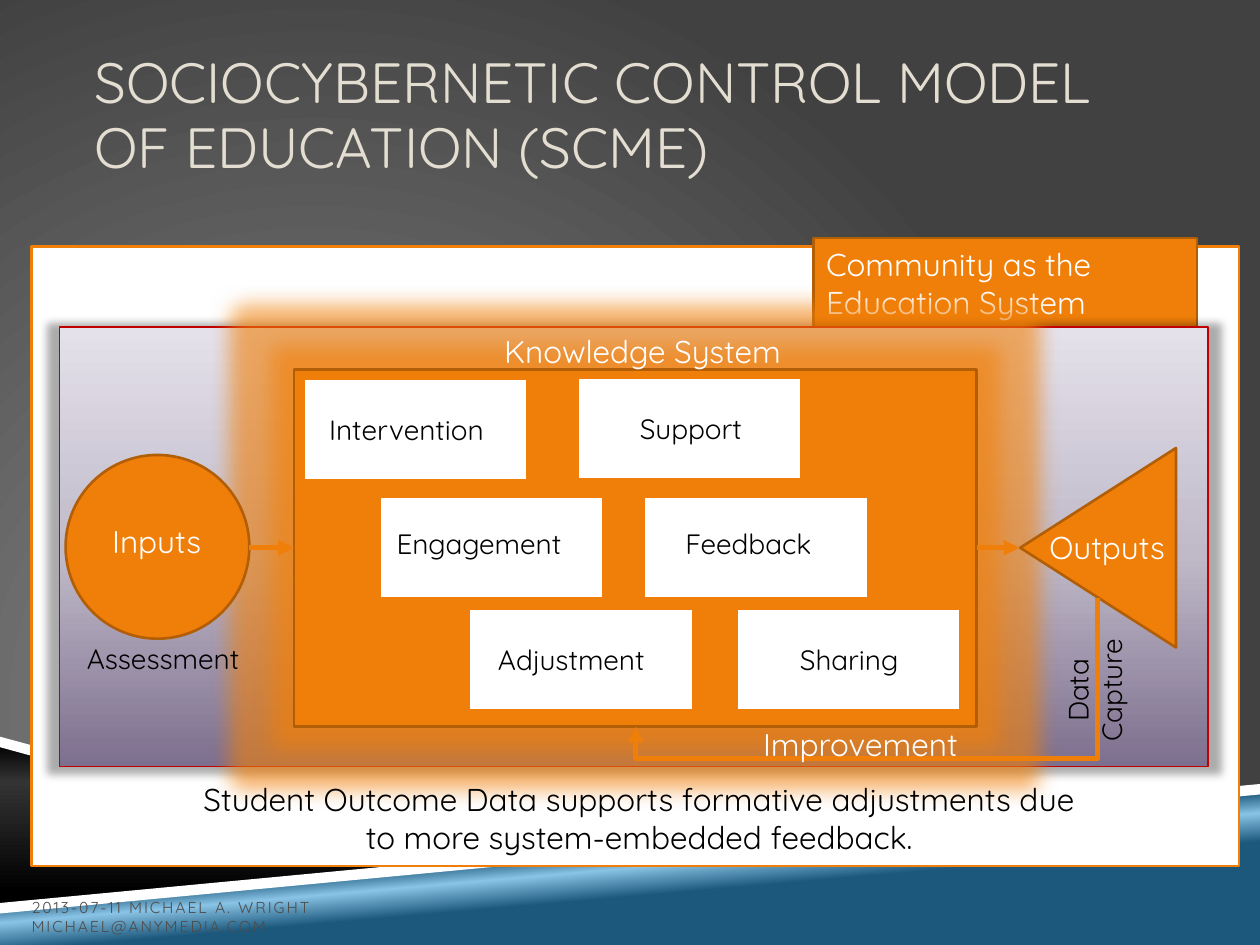
from lxml import etree
from pptx import Presentation
from pptx.dml.color import RGBColor
from pptx.enum import shapes, text
from pptx.oxml.ns import qn
from pptx.util import Pt

FONT = "Quicksand"
ORANGE = RGBColor(0xF0, 0x7F, 0x09)
BROWN = RGBColor(0xB2, 0x5E, 0x07)
RED = RGBColor(0xC0, 0x00, 0x00)
WHITE = RGBColor(0xFF, 0xFF, 0xFF)
BLACK = RGBColor(0x00, 0x00, 0x00)
GRAY = RGBColor(0x4D, 0x4D, 0x4D)
CHARCOAL = RGBColor(0x41, 0x41, 0x41)
SILVER = RGBColor(0x89, 0x89, 0x89)
CREAM = RGBColor(0xE3, 0xDE, 0xD1)
BLUE = RGBColor(0x1B, 0x58, 0x7C)
SKY = RGBColor(0x89, 0xC3, 0xE5)
SOOT = RGBColor(0x33, 0x33, 0x33)
PLUM = RGBColor(0x7D, 0x6F, 0x8E)
LILAC = RGBColor(0xBF, 0xB9, 0xC8)
MIST = RGBColor(0xE5, 0xE1, 0xEB)


def gradient(fill, owner, stops, angle=None):
    """Give the fill these colour stops, linear at an angle or circular without one."""
    fill.gradient()
    grad = owner.find(".//" + qn("a:gradFill"))
    grad.clear()
    gs_list = etree.SubElement(grad, qn("a:gsLst"))
    for pos, color in stops:
        gs = etree.SubElement(gs_list, qn("a:gs"), pos=str(pos * 1000))
        etree.SubElement(gs, qn("a:srgbClr"), val=str(color))
    if angle is None:
        circle = etree.SubElement(grad, qn("a:path"), path="circle")
        etree.SubElement(circle, qn("a:fillToRect"), l="50000", t="100000", r="100000", b="50000")
    else:
        etree.SubElement(grad, qn("a:lin"), ang=str(angle * 60000), scaled="0")


def write(sp, wording, size, color, align=text.PP_ALIGN.LEFT):
    tf = sp.text_frame
    tf.word_wrap = True
    tf.text = wording
    for p in tf.paragraphs:
        p.alignment = align
        for r in p.runs:
            r.font.name = FONT
            r.font.size = Pt(size)
            r.font.color.rgb = color
    return tf


prs = Presentation()
prs.slide_width, prs.slide_height = Pt(720), Pt(540)
s = prs.slides.add_slide(prs.slide_layouts[5])
gradient(s.background.fill, s._element, [(0, SILVER), (100, CHARCOAL)])

# Title
title = s.shapes.title
title.left, title.top, title.width, title.height = Pt(54), Pt(21.6), Pt(612), Pt(90)
tf = write(title, "SOCIOCYBERNETIC CONTROL MODEL OF EDUCATION (SCME)", 32.4, CREAM)
tf.margin_left = tf.margin_right = 0
tf.vertical_anchor = text.MSO_ANCHOR.MIDDLE
tf.paragraphs[0].line_spacing = 0.95

# Sweeping bands at the foot: points, gradient stops (white if none), angle
bands = [
    ([(0, 519), (720, 451.5), (720, 540), (0, 540)], [(39, BLUE), (50, SKY), (58, BLUE)], 265),
    ([(0, 424), (258.5, 493), (0, 519)], [(0, BLACK), (24, SOOT), (90, BLACK)], 90),
    ([(720, 448.5), (0, 516), (0, 522), (720, 454.5)], None, None),
    ([(0, 421), (0, 427), (252, 495.5), (270, 494)], None, None),
]
for points, stops, angle in bands:
    builder = s.shapes.build_freeform(*points[0], scale=Pt(1))
    builder.add_line_segments(points[1:], close=True)
    band = builder.convert_to_shape()
    band.shadow.inherit = False
    band.line.fill.background()
    if stops:
        gradient(band.fill, band._element, stops, angle)
    else:
        band.fill.solid()
        band.fill.fore_color.rgb = WHITE

# Footer
footer = s.shapes.add_textbox(Pt(18), Pt(505.5), Pt(228), Pt(29))
tf = write(footer, "2013-07-11 MICHAEL A. WRIGHT MICHAEL@ANYMEDIA.COM", 9, GRAY)
tf.margin_left = tf.margin_right = tf.margin_bottom = 0
tf.vertical_anchor = text.MSO_ANCHOR.BOTTOM
tf.paragraphs[0].runs[0]._r.get_or_add_rPr().set("spc", "110")

# Cards of the knowledge system: wording, card corner, label corner, label width
cards = [
    ("Intervention", 173.5, 216.5, 181, 232, 112),
    ("Support", 330, 216, 358.5, 231.5, 79),
    ("Engagement", 217, 284, 219.5, 297.5, 123),
    ("Feedback", 368, 284, 384.5, 297.5, 99),
    ("Adjustment", 268, 348, 277.5, 363.5, 108),
    ("Sharing", 421, 348, 450, 363.5, 108),
]

# Shapes of the model: name, preset, place, fill, line colour, line width
RECT = shapes.MSO_SHAPE.RECTANGLE
parts = [
    ("canvas", RECT, (18, 141, 690, 354), WHITE, ORANGE, 1.5),
    ("community", RECT, (465, 136, 219, 51), ORANGE, BROWN, 1.5),
    ("system", RECT, (34, 187, 656.5, 251), MIST, RED, 1),
    ("knowledge", RECT, (168, 211, 390, 204), ORANGE, BROWN, 1.5),
    ("inputs", shapes.MSO_SHAPE.OVAL, (37.5, 260, 105, 105), ORANGE, BROWN, 1.5),
    ("outputs", shapes.MSO_SHAPE.ISOSCELES_TRIANGLE, (570.5, 268.5, 114, 89), ORANGE, BROWN, 1.5),
]
parts += [(name, RECT, (x, y, 128, 58), WHITE, ORANGE, 1.5) for name, x, y, *_ in cards]
model = {}
for name, preset, place, fill, line, width in parts:
    sp = s.shapes.add_shape(preset, *map(Pt, place))
    sp.shadow.inherit = False
    sp.fill.solid()
    sp.fill.fore_color.rgb = fill
    sp.line.color.rgb = line
    sp.line.width = Pt(width)
    model[name] = sp
model["outputs"].rotation = 270
write(model["community"], "Community as the Education System", 18, WHITE)

system = model["system"]
gradient(system.fill, system._element, [(0, PLUM), (48, LILAC), (100, MIST)], 270)
effects = [
    ("system", "a:outerShdw", BLACK, 32,
     dict(blurRad=Pt(5), dist=Pt(1), dir=5400000, sx=102000, sy=102000, algn="ctr", rotWithShape=0)),
    ("knowledge", "a:glow", ORANGE, 60, dict(rad=Pt(24))),
]
for name, tag, color, alpha, settings in effects:
    effect_list = model[name]._element.spPr.find(qn("a:effectLst"))
    effect = etree.SubElement(effect_list, qn(tag), {k: str(v) for k, v in settings.items()})
    clr = etree.SubElement(effect, qn("a:srgbClr"), val=str(color))
    etree.SubElement(clr, qn("a:alpha"), val=str(alpha * 1000))

# Arrows; the last one is the feedback loop, turned a quarter
STRAIGHT, ELBOW = shapes.MSO_CONNECTOR.STRAIGHT, shapes.MSO_CONNECTOR.ELBOW
arrows = [
    (STRAIGHT, (142.5, 313, 168, 313)),
    (STRAIGHT, (558, 313, 582.5, 313)),
    (ELBOW, (458.5, 246.5, 532, 510.5)),
]
for kind, ends in arrows:
    arrow = s.shapes.add_connector(kind, *map(Pt, ends))
    arrow.line.color.rgb = ORANGE
    arrow.line.width = Pt(3)
    etree.SubElement(arrow.line._get_or_add_ln(), qn("a:tailEnd"), type="triangle")
    spPr = arrow._element.spPr
    etree.SubElement(spPr, qn("a:effectLst"))
    if kind == ELBOW:
        spPr.find(qn("a:xfrm")).set("rot", "5400000")
        guides = spPr.find(qn("a:prstGeom")).find(qn("a:avLst"))
        etree.SubElement(guides, qn("a:gd"), name="adj1", fmla="val 124500")

# Labels: wording, place, size, colour, alignment
LEFT, CENTER = text.PP_ALIGN.LEFT, text.PP_ALIGN.CENTER
labels = [
    ("Student Outcome Data supports formative adjustments due to more system-embedded feedback.",
     (103.5, 442, 523.5, 51), 18, BLACK, CENTER),
    ("Inputs", (57, 295, 70, 29), 18, WHITE, LEFT),
    ("Knowledge System", (281, 186, 181.5, 29), 18, WHITE, LEFT),
    ("Outputs", (592.5, 298, 84, 29), 18, WHITE, LEFT),
    ("Improvement", (429, 411, 134, 29), 18, WHITE, LEFT),
    ("Assessment", (42.5, 363, 123, 27), 16, BLACK, LEFT),
    ("Data\nCapture", (564, 371.5, 123, 46), 16, BLACK, CENTER),
]
labels += [(name, (x, y, w, 27), 16, BLACK, LEFT) for name, _, _, x, y, w in cards]
for wording, place, size, color, align in labels:
    label = s.shapes.add_textbox(*map(Pt, place))
    write(label, wording, size, color, align)
    if wording.startswith("Data"):
        label.rotation = 270

prs.save("out.pptx")
